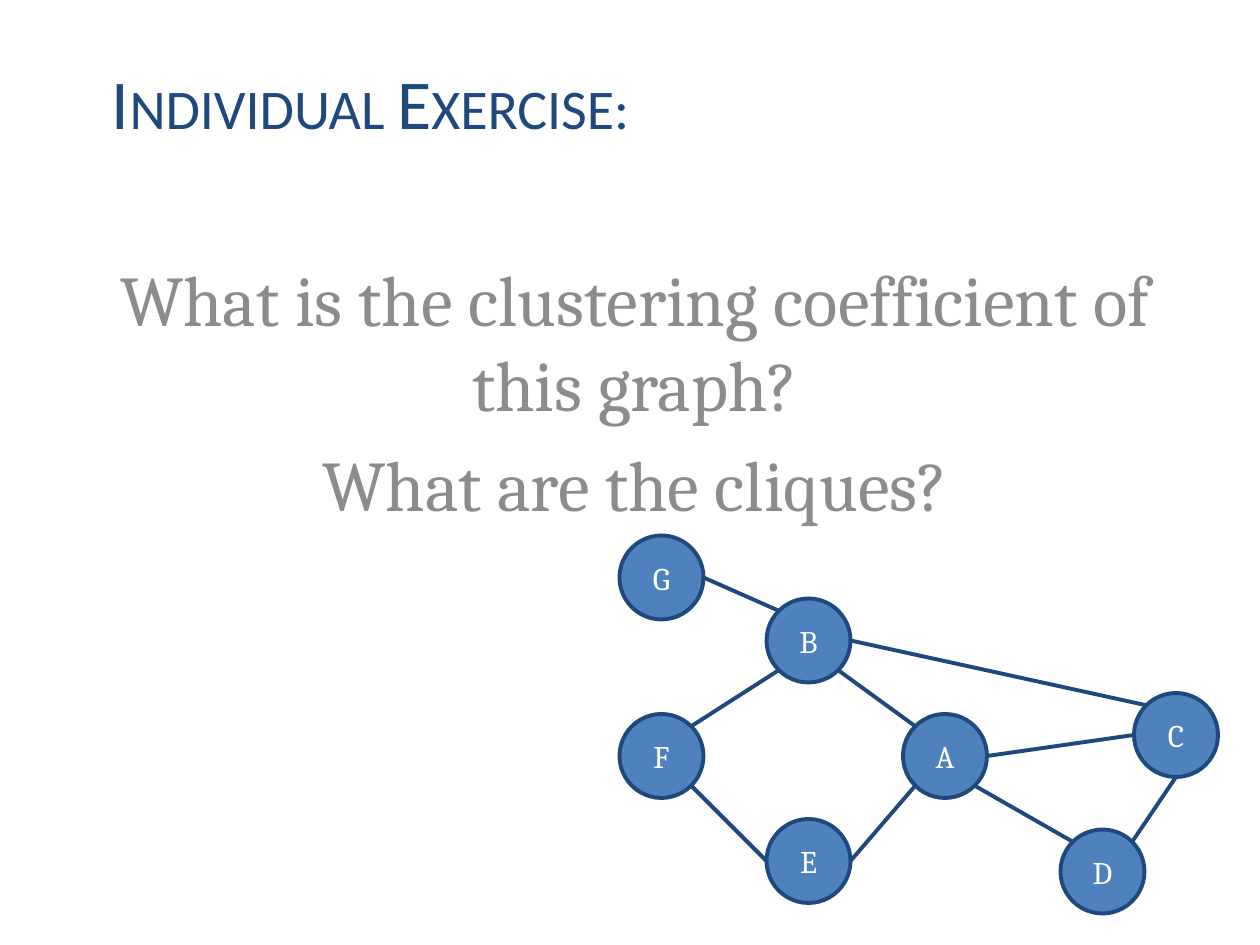
from math import cos, pi, sin

from lxml import etree
from pptx import Presentation
from pptx.dml.color import RGBColor
from pptx.enum.shapes import MSO_CONNECTOR, MSO_SHAPE
from pptx.enum.text import MSO_ANCHOR, PP_ALIGN
from pptx.oxml.ns import qn
from pptx.util import Inches, Pt

OVAL = MSO_SHAPE.OVAL
LINE = MSO_CONNECTOR.STRAIGHT
TOP, MID, LOW = MSO_ANCHOR.TOP, MSO_ANCHOR.MIDDLE, MSO_ANCHOR.BOTTOM
LEFT, CENTER = PP_ALIGN.LEFT, PP_ALIGN.CENTER

COLORS = {"navy": "1F497D", "blue": "4F81BD", "gray": "8C8C8C", "white": "FFFFFF"}
CELL = 1 / 12
RADIUS = 4
NODES = {"A": (90, 72), "B": (77, 61), "C": (112, 70), "D": (105, 83),
         "E": (77, 82), "F": (63, 72), "G": (63, 55)}
RIM = {"E": 0, "SE": 1, "S": 2, "SW": 3, "W": 4, "NW": 5, "N": 6, "NE": 7}
EDGES = [("C", "W", "A", "E"), ("C", "S", "D", "NE"), ("A", "SE", "D", "NW"),
         ("G", "E", "B", "NW"), ("F", "NE", "B", "SW"), ("A", "NW", "B", "SE"),
         ("A", "SW", "E", "E"), ("F", "SE", "E", "W"), ("B", "E", "C", "NW")]


def color(name):
    """Return the named colour."""
    return RGBColor.from_string(COLORS[name])


def grid(count):
    """Turn grid cells into a length."""
    return Inches(count * CELL)


def style(para, font, size, tint, align):
    """Set the font and alignment of a paragraph."""
    para.alignment = align
    para.font.name = font
    para.font.size = Pt(size)
    para.font.color.rgb = color(tint)


def add_text(slide, box, lines, font, size, tint, align, anchor, gap=0):
    """Add a wrapped text box and return its frame."""
    frame = slide.shapes.add_textbox(*map(Inches, box)).text_frame
    frame.word_wrap = True
    frame.vertical_anchor = anchor
    frame.text = "\n".join(lines)
    for para in frame.paragraphs:
        style(para, font, size, tint, align)
        para.space_before = Pt(gap)
    return frame


def add_title(slide, text):
    """Add the title in small capitals."""
    frame = add_text(slide, (0.79, 0.42, 8.5, 1.49), [text],
                     "Calibri", 40, "navy", LEFT, TOP)
    run = frame.paragraphs[0].runs[0]
    run._r.get_or_add_rPr().set("cap", "small")


def add_node(slide, name):
    """Add a lettered graph node."""
    x, y = NODES[name]
    node = slide.shapes.add_shape(OVAL, grid(x - RADIUS), grid(y - RADIUS),
                                  grid(2 * RADIUS), grid(2 * RADIUS))
    node.shadow.inherit = False
    node.fill.solid()
    node.fill.fore_color.rgb = color("blue")
    node.line.color.rgb = color("navy")
    node.line.width = Pt(2.25)
    frame = node.text_frame
    frame.text = name
    frame.vertical_anchor = MID
    style(frame.paragraphs[0], "Cambria", 18, "white", CENTER)


def rim(name, side):
    """Find a compass point on the rim of a node."""
    x, y = NODES[name]
    turn = RIM[side] * pi / 4
    return grid(x + RADIUS * cos(turn)), grid(y + RADIUS * sin(turn))


def add_edge(slide, start, out, end, into):
    """Add a line between the rims of two nodes."""
    edge = slide.shapes.add_connector(LINE, *rim(start, out), *rim(end, into))
    edge.line.color.rgb = color("navy")
    edge.line.width = Pt(2.25)
    etree.SubElement(edge._element.spPr, qn("a:effectLst"))


def main():
    """Build the exercise slide."""
    deck = Presentation()
    deck.slide_width, deck.slide_height = Inches(10), Inches(7.5)
    slide = deck.slides.add_slide(deck.slide_layouts[6])
    add_title(slide, "Individual Exercise:")
    add_text(slide, (0.79, 2, 8.5, 2.22),
             ["What is the clustering coefficient of this graph?",
              "What are the cliques?"],
             "Cambria", 40.7, "gray", CENTER, LOW, gap=8)
    for edge in EDGES:
        add_edge(slide, *edge)
    for name in NODES:
        add_node(slide, name)
    deck.save("out.pptx")


if __name__ == "__main__":
    main()
